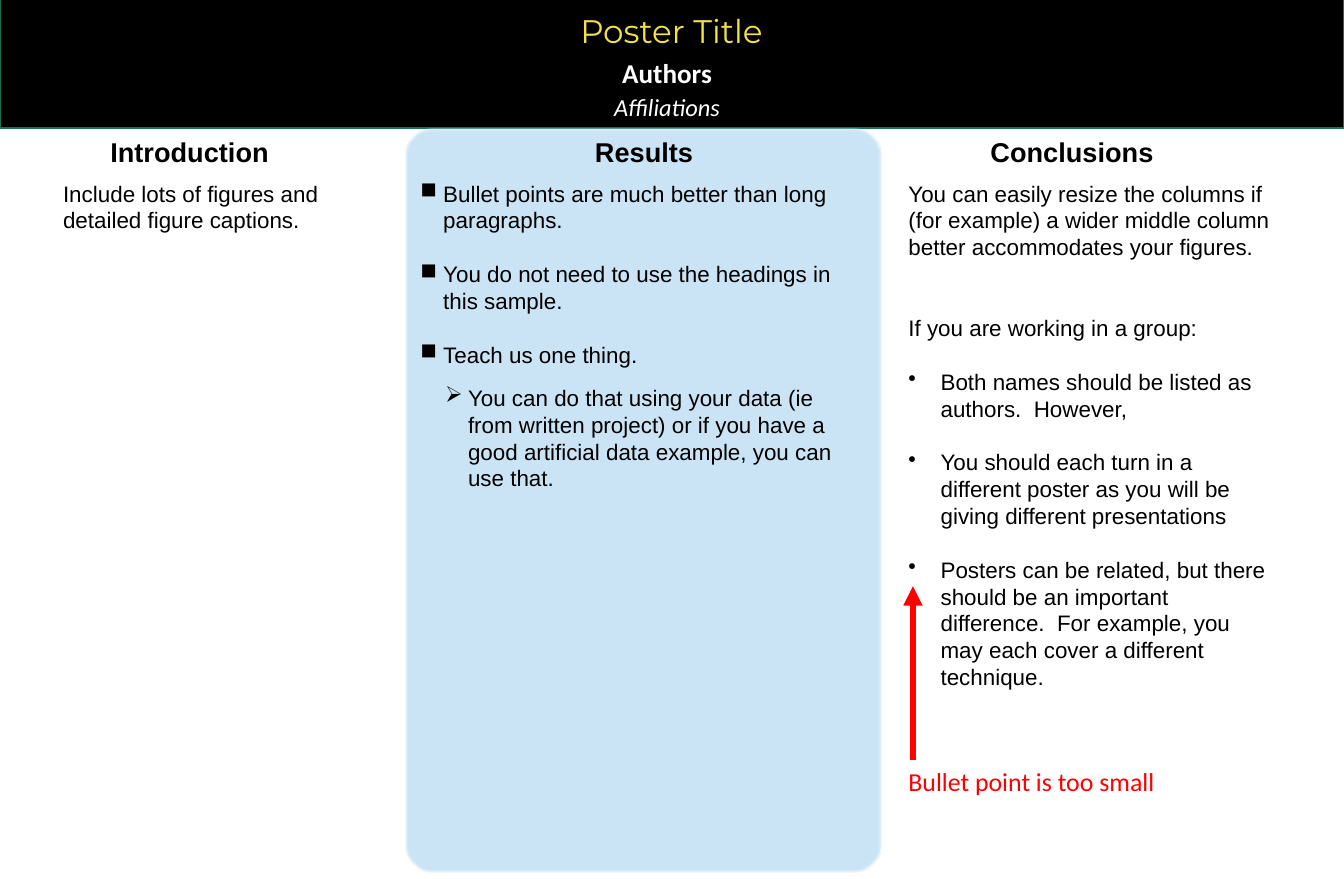
from lxml import etree
from pptx import Presentation
from pptx import util as u
from pptx.dml.color import RGBColor
from pptx.enum import shapes, text
from pptx.oxml.ns import qn

BLACK, WHITE, RED = "000000", "FFFFFF", "FF0000"
BODY_SIZE = 15.6
BODY_LINE = 18.7


def color(value):
    return RGBColor.from_string(value)


def add_text(box, paragraphs, font="Arial", size=BODY_SIZE, ink=BLACK, bold=False,
             align=text.PP_ALIGN.LEFT, spacing=None):
    """Add a text box; each paragraph is (words, bullet, left margin, hanging, space before)."""
    shape = slide.shapes.add_textbox(*(u.Cm(length) for length in box))
    frame = shape.text_frame
    frame.word_wrap = True
    for index, (words, bullet, margin, hanging, before) in enumerate(paragraphs):
        paragraph = frame.paragraphs[0] if index == 0 else frame.add_paragraph()
        paragraph.text = words
        paragraph.alignment = align
        paragraph.space_before = u.Pt(before)
        paragraph.line_spacing = spacing
        paragraph.font.name = font
        paragraph.font.size = u.Pt(size)
        paragraph.font.bold = bold
        paragraph.font.color.rgb = color(ink)
        if bullet:
            properties = paragraph._p.get_or_add_pPr()
            properties.set("marL", str(u.Cm(margin)))
            properties.set("indent", str(-u.Cm(hanging)))
            mark = etree.Element(qn("a:buChar"), char=bullet)
            properties.find(qn("a:defRPr")).addprevious(mark)
    return frame


presentation = Presentation()
presentation.slide_width = u.Cm(33.02)
presentation.slide_height = u.Cm(21.59)
slide = presentation.slides.add_slide(presentation.slide_layouts[5])

# Header band, kept behind the title
band = slide.shapes.add_shape(shapes.MSO_SHAPE.RECTANGLE,
                              u.Cm(0), u.Cm(-0.33), u.Cm(33.02), u.Cm(3.48))
band.shadow.inherit = False
band.fill.solid()
band.fill.fore_color.rgb = color(BLACK)
band.line.color.rgb = color("157259")
band.line.width = u.Pt(1)

title = slide.shapes.title
title._element.addprevious(band._element)
title.left, title.top, title.width, title.height = u.Cm(2.36), u.Cm(0.2), u.Cm(28.27), u.Cm(1.17)
title.text_frame.text = "Poster Title"
title.text_frame.auto_size = text.MSO_AUTO_SIZE.NONE
title.text_frame.vertical_anchor = text.MSO_ANCHOR.MIDDLE
paragraph = title.text_frame.paragraphs[0]
paragraph.alignment = text.PP_ALIGN.CENTER
paragraph.line_spacing = 0.95
paragraph.font.name = "Montserrat"
paragraph.font.size = u.Pt(22.7)
paragraph.font.color.rgb = color("F3E04B")

byline = add_text((3.12, 1.19, 26.54, 1.9),
                  [("Authors", None, 0, 0, 0), ("Affiliations", None, 0, 0, 0)],
                  font="Calibri", size=18.9, ink=WHITE, bold=True,
                  align=text.PP_ALIGN.CENTER, spacing=1.1)
affiliations = byline.paragraphs[1].font
affiliations.size = u.Pt(17)
affiliations.bold = False
affiliations.italic = True

# Middle column panel with softened edges
panel = slide.shapes.add_shape(shapes.MSO_SHAPE.ROUNDED_RECTANGLE,
                               u.Cm(9.96), u.Cm(3.15), u.Cm(11.71), u.Cm(18.29))
panel.adjustments[0] = 0.06
panel.fill.solid()
panel.fill.fore_color.rgb = color("CAE4F6")
panel.line.fill.background()
panel.shadow.inherit = False
effects = panel._element.spPr.find(qn("a:effectLst"))
etree.SubElement(effects, qn("a:softEdge"), rad=str(u.Pt(1)))

# Columns: heading, heading left and width, body left, width and height, body paragraphs
columns = [
    ("Introduction", 2.08, 5.16, 1.3, 8.46, 1.6, [
        ("Include lots of figures and detailed figure captions.", None, 0, 0, 0),
    ]),
    ("Results", 13.87, 3.91, 10.08, 10.8, 7.98, [
        ("Bullet points are much better than long paragraphs.", "■", 0.56, 0.56, 0),
        ("You do not need to use the headings in this sample.", "■", 0.56, 0.56, BODY_LINE),
        ("Teach us one thing.", "■", 0.56, 0.56, BODY_LINE),
        ("You can do that using your data (ie from written project) or if you have a "
         "good artificial data example, you can use that.", "➢", 1.17, 0.56, 11.2),
    ]),
    ("Conclusions", 23.85, 4.98, 22.07, 9.53, 17.58, [
        ("You can easily resize the columns if (for example) a wider middle column "
         "better accommodates your figures.", None, 0, 0, 0),
        ("If you are working in a group:", None, 0, 0, 2 * BODY_LINE),
        ("Both names should be listed as authors.  However,", "•", 0.79, 0.79, BODY_LINE),
        ("You should each turn in a different poster as you will be giving different "
         "presentations", "•", 0.79, 0.79, BODY_LINE),
        ("Posters can be related, but there should be an important difference.  For "
         "example, you may each cover a different technique.", "•", 0.79, 0.79, BODY_LINE),
    ]),
]
for heading, heading_left, heading_width, left, width, height, paragraphs in columns:
    add_text((heading_left, 3.2, heading_width, 1.07), [(heading, None, 0, 0, 0)],
             size=18.9, bold=True, align=text.PP_ALIGN.CENTER)
    add_text((left, 4.29, width, height), paragraphs, spacing=u.Pt(BODY_LINE))

# Remark with an arrow to the small bullet
add_text((22.07, 18.67, 7.34, 1.02), [("Bullet point is too small", None, 0, 0, 0)],
         font="Calibri", size=18, ink=RED)
arrow = slide.shapes.add_connector(shapes.MSO_CONNECTOR.STRAIGHT,
                                   u.Cm(22.43), u.Cm(18.67), u.Cm(22.43), u.Cm(14.4))
arrow.line.color.rgb = color(RED)
arrow.line.width = u.Pt(4.5)
etree.SubElement(arrow.line._get_or_add_ln(), qn("a:tailEnd"), type="triangle")
etree.SubElement(arrow._element.spPr, qn("a:effectLst"))

presentation.save("out.pptx")
